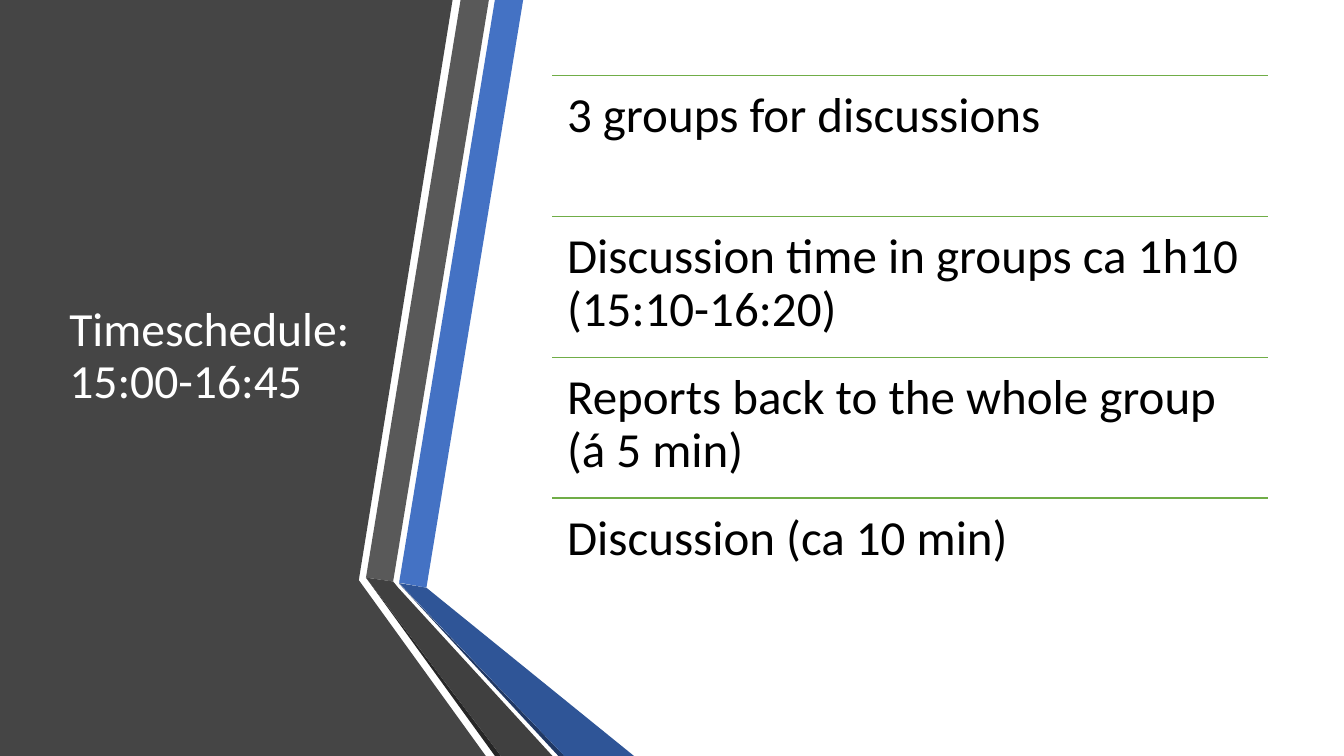
"""Build the time schedule slide for the group discussions."""
from dataclasses import dataclass

from lxml import etree
from pptx import Presentation
from pptx.dml.color import RGBColor
from pptx.enum.shapes import MSO_CONNECTOR
from pptx.enum.text import MSO_ANCHOR
from pptx.oxml.ns import qn
from pptx.slide import Slide
from pptx.util import Pt

STRAIGHT = MSO_CONNECTOR.STRAIGHT
TOP = MSO_ANCHOR.TOP
MIDDLE = MSO_ANCHOR.MIDDLE

WHITE = RGBColor(0xFF, 0xFF, 0xFF)
BLACK = RGBColor(0x00, 0x00, 0x00)
PANEL_GRAY = RGBColor(0x45, 0x45, 0x45)
BAND_GRAY = RGBColor(0x59, 0x59, 0x59)
TAIL_GRAY = RGBColor(0x40, 0x40, 0x40)
EDGE_GRAY = RGBColor(0x26, 0x26, 0x26)
BAND_BLUE = RGBColor(0x44, 0x72, 0xC4)
TAIL_BLUE = RGBColor(0x2F, 0x55, 0x97)
EDGE_BLUE = RGBColor(0x20, 0x38, 0x64)
RULE_GREEN = RGBColor(0x70, 0xAD, 0x47)

FONT = "Calibri"
PAGE_WIDTH, PAGE_HEIGHT = 960, 540
AGENDA_LEFT, AGENDA_TOP = 394.56, 54
AGENDA_WIDTH, ROW_HEIGHT = 511.2, 100.6


@dataclass(frozen=True)
class Polygon:
    color: RGBColor
    points: tuple[tuple[float, float], ...]


@dataclass(frozen=True)
class Label:
    text: str
    left: float
    top: float
    width: float
    height: float
    size: float
    color: RGBColor
    anchor: MSO_ANCHOR
    inset_x: float
    inset_y: float


POLYGONS = (
    Polygon(PANEL_GRAY, ((0, 0), (323.3, 0), (256.3, 414.4), (347, 540), (0, 540))),
    Polygon(BAND_BLUE, ((285.1, 416.2), (304.6, 419.8), (373.7, 0), (353.5, 0))),
    Polygon(BAND_GRAY, ((349.2, 0), (329, 0), (261.4, 412.6), (280.8, 415.4))),
    Polygon(EDGE_GRAY, ((261.4, 412.6), (353.5, 540), (357.8, 540))),
    Polygon(EDGE_BLUE, ((285.1, 416.9), (398.9, 540), (403.2, 540))),
    Polygon(TAIL_BLUE, ((285.1, 416.5), (403.2, 540), (452.9, 540), (304.6, 419.8))),
    Polygon(TAIL_GRAY, ((394.6, 540), (284.4, 419.8), (280.8, 415.4),
                        (261.4, 412.6), (357.8, 540))),
)
TITLE = Label("Timeschedule: 15:00-16:45", 42.5, 54, 218.9, 401.8,
              34, WHITE, MIDDLE, 7.2, 3.6)
AGENDA = (
    "3 groups for discussions",
    "Discussion time in groups ca 1h10 (15:10-16:20)",
    "Reports back to the whole group (á 5 min)",
    "Discussion (ca 10 min)",
)


def draw_polygon(page: Slide, polygon: Polygon) -> None:
    """Draw a filled outline without a border."""
    start, *rest = [(Pt(x), Pt(y)) for x, y in polygon.points]
    builder = page.shapes.build_freeform(*start)
    builder.add_line_segments(rest, close=True)
    shape = builder.convert_to_shape()
    shape.shadow.inherit = False
    shape.fill.solid()
    shape.fill.fore_color.rgb = polygon.color
    shape.line.fill.background()


def draw_label(page: Slide, label: Label) -> None:
    """Draw a wrapped text box."""
    box = page.shapes.add_textbox(
        Pt(label.left), Pt(label.top), Pt(label.width), Pt(label.height))
    frame = box.text_frame
    frame.word_wrap = True
    frame.vertical_anchor = label.anchor
    frame.margin_left = frame.margin_right = Pt(label.inset_x)
    frame.margin_top = frame.margin_bottom = Pt(label.inset_y)
    frame.text = label.text
    para = frame.paragraphs[0]
    para.line_spacing = 0.9
    span = para.runs[0]
    span.font.name = FONT
    span.font.size = Pt(label.size)
    span.font.color.rgb = label.color


def draw_rule(page: Slide, top: float) -> None:
    """Draw a thin line across the agenda column."""
    rule = page.shapes.add_connector(
        STRAIGHT, Pt(AGENDA_LEFT), Pt(top), Pt(AGENDA_LEFT + AGENDA_WIDTH), Pt(top))
    rule.line.color.rgb = RULE_GREEN
    rule.line.width = Pt(1)
    etree.SubElement(rule.element.spPr, qn("a:effectLst"))


def main() -> None:
    """Build and save the deck."""
    deck = Presentation()
    deck.slide_width = Pt(PAGE_WIDTH)
    deck.slide_height = Pt(PAGE_HEIGHT)
    page = deck.slides.add_slide(deck.slide_layouts[6])
    for polygon in POLYGONS:
        draw_polygon(page, polygon)
    draw_label(page, TITLE)
    for row, text in enumerate(AGENDA):
        top = AGENDA_TOP + row * ROW_HEIGHT
        draw_rule(page, top)
        draw_label(page, Label(text, AGENDA_LEFT, top, AGENDA_WIDTH, ROW_HEIGHT,
                               35, BLACK, TOP, 10.5, 10.5))
    deck.save("out.pptx")


if __name__ == "__main__":
    main()
